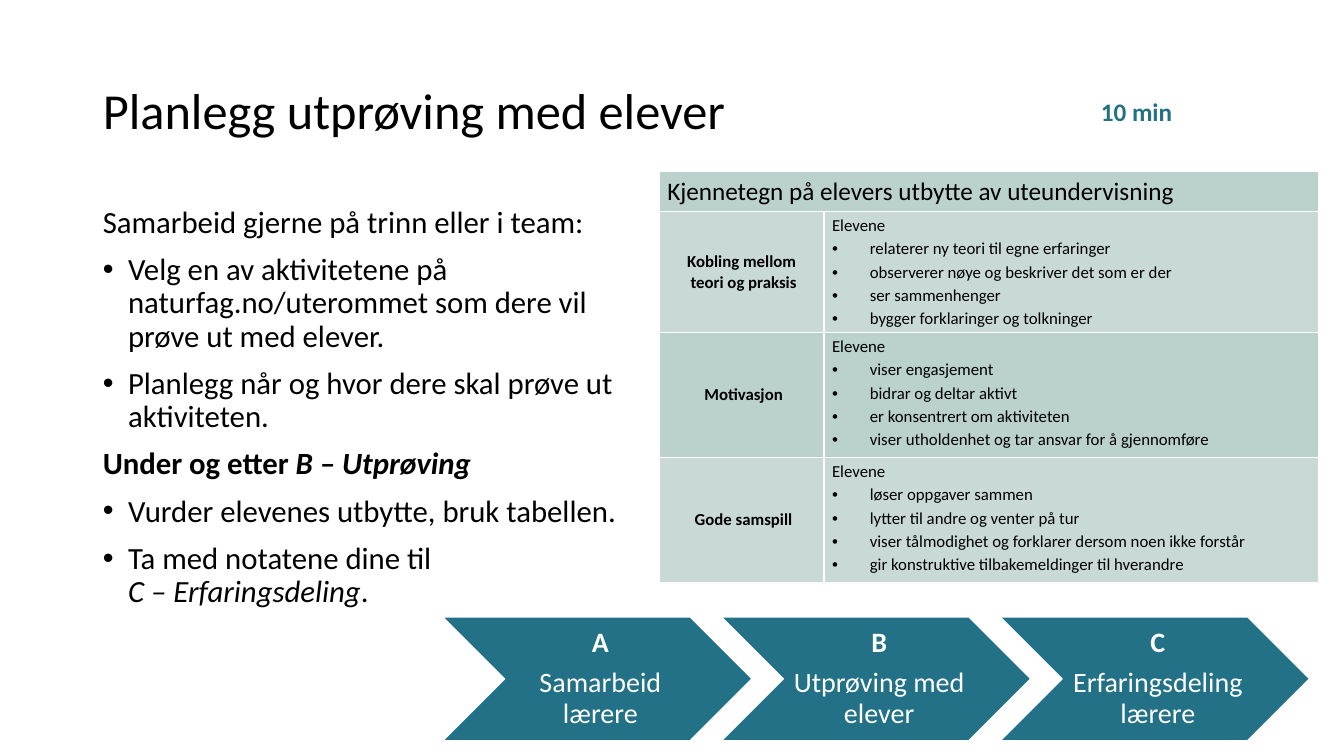
from dataclasses import dataclass

from lxml.etree import SubElement
from pptx import Presentation
from pptx.dml.color import RGBColor
from pptx.enum.shapes import MSO_SHAPE
from pptx.enum.text import MSO_ANCHOR, MSO_AUTO_SIZE, PP_ALIGN
from pptx.oxml import parse_xml
from pptx.oxml.ns import nsdecls, qn
from pptx.shapes.placeholder import SlidePlaceholder
from pptx.slide import Slide
from pptx.table import _Cell as Cell
from pptx.text.text import TextFrame
from pptx.util import Emu, Inches, Pt

BLACK = RGBColor(0x00, 0x00, 0x00)
WHITE = RGBColor(0xFF, 0xFF, 0xFF)
TEAL = RGBColor(0x22, 0x71, 0x86)
SAGE = RGBColor(0xBB, 0xD1, 0xCC)
LIGHT_SAGE = RGBColor(0xC9, 0xDA, 0xD6)
FONT = "Calibri"
SLIDE_WIDTH, SLIDE_HEIGHT = Inches(13.333), Inches(7.5)


@dataclass(frozen=True)
class Span:
    text: str
    bold: bool = False
    italic: bool = False


@dataclass(frozen=True)
class Line:
    spans: tuple[Span, ...]
    bullet: bool = False


@dataclass(frozen=True)
class Style:
    size: int
    color: RGBColor = BLACK
    align: PP_ALIGN = PP_ALIGN.LEFT
    spacing: float = 1.0
    before: int = 0
    after: int = 0
    indent: float = 0


@dataclass(frozen=True)
class Area:
    left: float
    top: float
    width: float
    height: float

    def box(self) -> tuple[Emu, Emu, Emu, Emu]:
        return across(self.left), down(self.top), across(self.width), down(self.height)


@dataclass(frozen=True)
class Step:
    letter: str
    label: str


@dataclass(frozen=True)
class Criterion:
    name: str
    signs: tuple[str, ...]
    fill: RGBColor
    height: float


TITLE_STYLE = Style(36, spacing=0.9)
TIME_STYLE = Style(18, TEAL, PP_ALIGN.CENTER, 0.9)
TASK_STYLE = Style(22, spacing=0.9, before=10, indent=1.88)
STEP_STYLE = Style(20, WHITE, PP_ALIGN.CENTER, 0.9, after=7)
HEADING_STYLE = Style(18, before=1, after=1)
NAME_STYLE = Style(12, align=PP_ALIGN.CENTER, before=1, after=1)
SIGN_STYLE = Style(12, before=1, after=1, indent=2.81)

TITLE_AREA = Area(6.9, 5.33, 86.25, 19.33)
TIME_AREA = Area(79.95, 12.53, 9.23, 5.07)
TASK_AREA = Area(6.9, 26.67, 42.23, 63.47)
FIRST_STEP = Area(32.93, 81.6, 23.03, 16.4)
STEP_PITCH = 20.74
TABLE_AREA = Area(49.05, 22.67, 49.05, 54.39)
HEADING_HEIGHT = 5.33
NAME_SHARE = 0.25

TASKS = (
    Line((Span("Samarbeid gjerne på trinn eller i team:"),)),
    Line((Span("Velg en av aktivitetene på naturfag.no/uterommet som dere vil prøve ut med elever."),), True),
    Line((Span("Planlegg når og hvor dere skal prøve ut aktiviteten."),), True),
    Line((Span("Under og etter ", True), Span("B – Utprøving", True, True))),
    Line((Span("Vurder elevenes utbytte, bruk tabellen."),), True),
    Line((Span("Ta med notatene dine til \n"), Span("C – Erfaringsdeling", italic=True), Span(".")), True),
)
STEPS = (
    Step("A", "Samarbeid lærere"),
    Step("B", "Utprøving med elever"),
    Step("C", "Erfaringsdeling lærere"),
)
CRITERIA = (
    Criterion("Kobling mellom \nteori og praksis", (
        "relaterer ny teori til egne erfaringer",
        "observerer nøye og beskriver det som er der",
        "ser sammenhenger",
        "bygger forklaringer og tolkninger",
    ), LIGHT_SAGE, 16),
    Criterion("Motivasjon", (
        "viser engasjement",
        "bidrar og deltar aktivt",
        "er konsentrert om aktiviteten",
        "viser utholdenhet og tar ansvar for å gjennomføre",
    ), SAGE, 16.53),
    Criterion("Gode samspill", (
        "løser oppgaver sammen",
        "lytter til andre og venter på tur",
        "viser tålmodighet og forklarer dersom noen ikke forstår",
        "gir konstruktive tilbakemeldinger til hverandre",
    ), LIGHT_SAGE, 16.53),
)


def across(percent: float) -> Emu:
    return Emu(round(SLIDE_WIDTH * percent / 100))


def down(percent: float) -> Emu:
    return Emu(round(SLIDE_HEIGHT * percent / 100))


def write(frame: TextFrame, lines: tuple[Line, ...], style: Style) -> None:
    for index, line in enumerate(lines):
        para = frame.add_paragraph() if index else frame.paragraphs[0]
        properties = para._p.get_or_add_pPr()
        indent = across(style.indent) if line.bullet else 0
        properties.set("marL", str(indent))
        properties.set("indent", str(-indent))
        if line.bullet:
            SubElement(properties, qn("a:buFont"), typeface="Arial")
            SubElement(properties, qn("a:buChar"), char="•")
        else:
            SubElement(properties, qn("a:buNone"))
        para.alignment = style.align
        para.line_spacing = style.spacing
        para.space_before = Pt(style.before if index else 0)
        para.space_after = Pt(style.after)
        for span in line.spans:
            for part, text in enumerate(span.text.split("\n")):
                if part:
                    para.add_line_break()
                if text:
                    run = para.add_run()
                    run.text = text
                    run.font.name = FONT
                    run.font.size = Pt(style.size)
                    run.font.color.rgb = style.color
                    run.font.bold = span.bold
                    run.font.italic = span.italic


def fill_placeholder(holder: SlidePlaceholder, area: Area, lines: tuple[Line, ...], style: Style) -> None:
    holder.left, holder.top, holder.width, holder.height = area.box()
    holder.text_frame.auto_size = MSO_AUTO_SIZE.NONE
    holder.text_frame.word_wrap = True
    write(holder.text_frame, lines, style)


def draw_steps(page: Slide) -> None:
    group = page.shapes.add_group_shape()
    for index, step in enumerate(STEPS):
        left = FIRST_STEP.left + index * STEP_PITCH
        area = Area(left, FIRST_STEP.top, FIRST_STEP.width, FIRST_STEP.height)
        chevron = group.shapes.add_shape(MSO_SHAPE.CHEVRON, *area.box())
        chevron.shadow.inherit = False
        chevron.fill.solid()
        chevron.fill.fore_color.rgb = TEAL
        chevron.line.color.rgb = WHITE
        chevron.line.width = Pt(1)
        label_area = Area(left + area.width / 5, area.top, area.width * 3 / 5, area.height)
        frame = group.shapes.add_textbox(*label_area.box()).text_frame
        frame.word_wrap = True
        frame.vertical_anchor = MSO_ANCHOR.MIDDLE
        frame.margin_left = across(0.66)
        frame.margin_right = across(0.2)
        frame.margin_top = frame.margin_bottom = down(0.36)
        write(frame, (Line((Span(step.letter, True),)), Line((Span(step.label),))), STEP_STYLE)


def fill_cell(cell: Cell, lines: tuple[Line, ...], style: Style, fill: RGBColor, anchor: MSO_ANCHOR) -> None:
    cell.fill.solid()
    cell.fill.fore_color.rgb = fill
    cell.vertical_anchor = anchor
    cell.margin_left, cell.margin_right = across(0.6), across(0.3)
    cell.margin_top = cell.margin_bottom = down(0.53)
    for index, side in enumerate(("lnL", "lnR", "lnT", "lnB")):
        border = parse_xml(
            f'<a:{side} {nsdecls("a")} w="{Pt(1)}"><a:solidFill>'
            f'<a:srgbClr val="{WHITE}"/></a:solidFill></a:{side}>'
        )
        cell._tc.get_or_add_tcPr().insert(index, border)
    write(cell.text_frame, lines, style)


def draw_table(page: Slide) -> None:
    table = page.shapes.add_table(len(CRITERIA) + 1, 2, *TABLE_AREA.box()).table
    table.first_row = table.horz_banding = False
    table.columns[0].width = across(TABLE_AREA.width * NAME_SHARE)
    table.columns[1].width = across(TABLE_AREA.width * (1 - NAME_SHARE))
    table.rows[0].height = down(HEADING_HEIGHT)
    table.cell(0, 0).merge(table.cell(0, 1))
    heading = Line((Span("Kjennetegn på elevers utbytte av uteundervisning"),))
    fill_cell(table.cell(0, 0), (heading,), HEADING_STYLE, SAGE, MSO_ANCHOR.MIDDLE)
    for row, criterion in enumerate(CRITERIA, 1):
        table.rows[row].height = down(criterion.height)
        name = Line((Span(criterion.name, True),))
        signs = tuple(Line((Span(sign),), True) for sign in criterion.signs)
        fill_cell(table.cell(row, 0), (name,), NAME_STYLE, criterion.fill, MSO_ANCHOR.MIDDLE)
        fill_cell(table.cell(row, 1), (Line((Span("Elevene"),)), *signs), SIGN_STYLE, criterion.fill, MSO_ANCHOR.TOP)


def main() -> None:
    deck = Presentation()
    deck.slide_width, deck.slide_height = SLIDE_WIDTH, SLIDE_HEIGHT
    page = deck.slides.add_slide(deck.slide_layouts.get_by_name("Two Content"))
    title, tasks, time = page.placeholders
    fill_placeholder(title, TITLE_AREA, (Line((Span("Planlegg utprøving med elever"),)),), TITLE_STYLE)
    fill_placeholder(time, TIME_AREA, (Line((Span("10 min", True),)),), TIME_STYLE)
    fill_placeholder(tasks, TASK_AREA, TASKS, TASK_STYLE)
    draw_steps(page)
    draw_table(page)
    deck.save("out.pptx")


if __name__ == "__main__":
    main()
